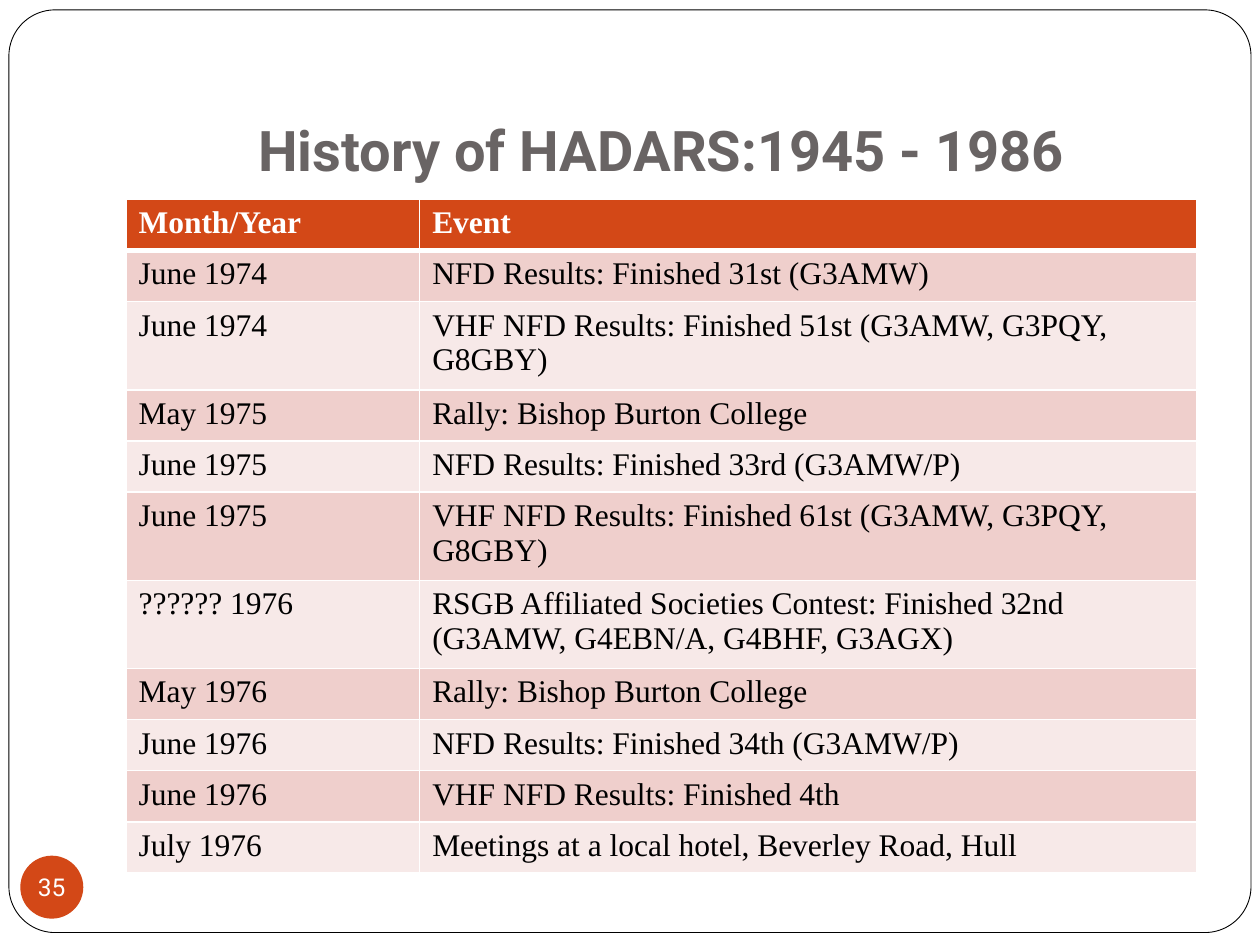
from lxml import etree
from pptx import Presentation
from pptx.dml.color import RGBColor
from pptx.enum.shapes import MSO_SHAPE
from pptx.enum.text import MSO_ANCHOR, PP_ALIGN
from pptx.oxml.ns import qn
from pptx.util import Cm, Pt

ROUND, OVAL = MSO_SHAPE.ROUNDED_RECTANGLE, MSO_SHAPE.OVAL
BOTTOM, MIDDLE = MSO_ANCHOR.BOTTOM, MSO_ANCHOR.MIDDLE
LEFT, CENTER = PP_ALIGN.LEFT, PP_ALIGN.CENTER

COLORS = {
    "white": "FFFFFF", "black": "000000", "title": "696464",
    "accent": "D34817", "dark": "EFCFCC", "light": "F7E9E8",
}

EVENTS = [
    ("Month/Year", "Event"),
    ("June 1974", "NFD Results: Finished 31st (G3AMW)"),
    ("June 1974", "VHF NFD Results: Finished 51st (G3AMW, G3PQY, G8GBY)"),
    ("May 1975", "Rally: Bishop Burton College"),
    ("June 1975", "NFD Results: Finished 33rd (G3AMW/P)"),
    ("June 1975", "VHF NFD Results: Finished 61st (G3AMW, G3PQY, G8GBY)"),
    ("?????? 1976", "RSGB Affiliated Societies Contest: Finished 32nd\n"
                    "(G3AMW, G4EBN/A, G4BHF, G3AGX)"),
    ("May 1976", "Rally: Bishop Burton College"),
    ("June 1976", "NFD Results: Finished 34th (G3AMW/P)"),
    ("June 1976", "VHF NFD Results: Finished 4th"),
    ("July 1976", "Meetings at a local hotel, Beverley Road, Hull"),
]


def color(name):
    return RGBColor.from_string(COLORS[name])


def write(frame, text, font="Roboto", size=18, ink="black", bold=False, align=LEFT):
    """Fill a text frame, one paragraph per line of text."""
    frame.text = text
    for para in frame.paragraphs:
        para.alignment = align
        for run in para.runs:
            run.font.name = font
            run.font.size = Pt(size)
            run.font.bold = bold
            run.font.color.rgb = color(ink)


def inset(frame, left, top, right, bottom):
    frame.margin_left, frame.margin_top = Cm(left), Cm(top)
    frame.margin_right, frame.margin_bottom = Cm(right), Cm(bottom)


def border(cell, top, bottom):
    """Draw white cell borders; top and bottom are widths in points."""
    props = cell._tc.get_or_add_tcPr()
    sides = [("a:lnL", 1), ("a:lnR", 1), ("a:lnT", top), ("a:lnB", bottom)]
    for spot, (tag, width) in enumerate(sides):
        line = etree.Element(qn(tag), w=str(Pt(width)))
        fill = etree.SubElement(line, qn("a:solidFill"))
        etree.SubElement(fill, qn("a:srgbClr"), val=COLORS["white"])
        props.insert(spot, line)


class Deck:
    """Holds the table style and the current slide."""
    font = "Times New Roman"
    bands = ("light", "dark")

    def __init__(self, slide):
        self.slide = slide

    def shape(self, kind, box, fill, line=None):
        item = self.slide.shapes.add_shape(kind, *map(Cm, box))
        item.shadow.inherit = False
        item.fill.solid()
        item.fill.fore_color.rgb = color(fill)
        if line:
            item.line.color.rgb = color(line)
            item.line.width = Pt(0.5)
        else:
            item.line.fill.background()
        return item

    def frame(self, box):
        self.shape(ROUND, box, "white", "black").adjustments[0] = 0.05

    def title(self, text, box):
        frame = self.slide.shapes.add_textbox(*map(Cm, box)).text_frame
        frame.word_wrap = True
        frame.vertical_anchor = BOTTOM
        inset(frame, 0.25, 0.13, 0.25, 0.25)
        write(frame, text, size=32, ink="title", bold=True, align=CENTER)

    def badge(self, text, box):
        frame = self.shape(OVAL, box, "accent").text_frame
        frame.word_wrap = False
        frame.vertical_anchor = MIDDLE
        inset(frame, 0, 0, 0, 0)
        write(frame, text, size=14, ink="white", align=CENTER)

    def table(self, rows, left, top, widths, height):
        grid = self.slide.shapes.add_table(
            len(rows), len(widths), Cm(left), Cm(top),
            Cm(sum(widths)), Cm(height * len(rows))).table
        for col, width in zip(grid.columns, widths):
            col.width = Cm(width)
        for r, row in enumerate(rows):
            head = r == 0
            for c, text in enumerate(row):
                cell = grid.cell(r, c)
                cell.fill.solid()
                cell.fill.fore_color.rgb = color("accent" if head else self.bands[r % 2])
                border(cell, top=3 if r == 1 else 1, bottom=3 if head else 1)
                write(cell.text_frame, text, font=self.font,
                      ink="white" if head else "black", bold=head)


def main():
    show = Presentation()
    show.slide_width, show.slide_height = Cm(25.4), Cm(19.05)
    deck = Deck(show.slides.add_slide(show.slide_layouts[6]))
    deck.frame((0.18, 0.2, 25.04, 18.6))
    deck.title("History of HADARS:1945 - 1986", (2.54, 0.76, 21.59, 3.18))
    deck.table(EVENTS, 2.54, 4.02, (5.92, 15.67), 1.03)
    deck.badge("35", (0.41, 17.25, 1.27, 1.27))
    show.save("out.pptx")


if __name__ == "__main__":
    main()
